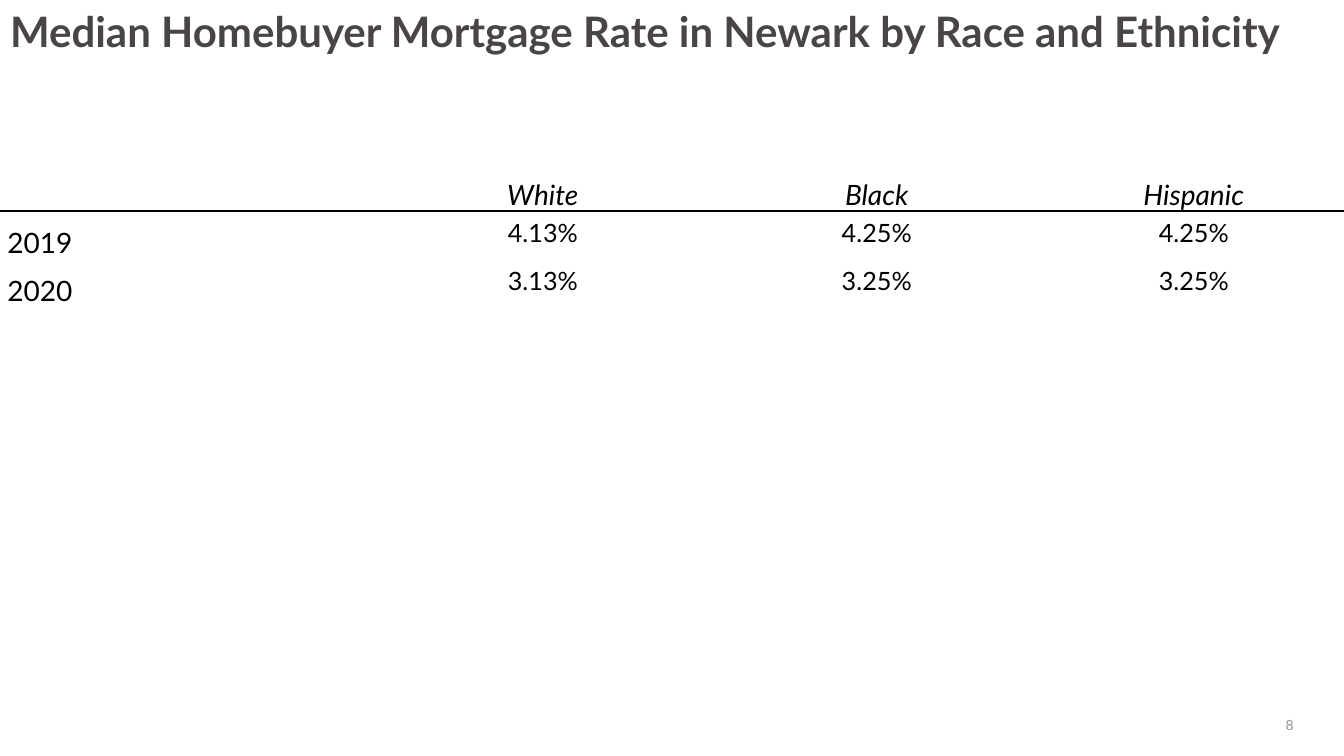
from dataclasses import dataclass

from lxml.etree import SubElement
from pptx import Presentation
from pptx.dml.color import RGBColor
from pptx.enum.text import MSO_ANCHOR, MSO_AUTO_SIZE, PP_ALIGN
from pptx.oxml.ns import qn
from pptx.util import Pt

EMU_PER_PX = 9525


def px(length):
    return length * EMU_PER_PX


@dataclass(frozen=True)
class Theme:
    font: str = "Lato"
    title_color: str = "494546"
    text_color: str = "000000"
    number_color: str = "959494"
    background: str = "FFFFFF"
    title_size: int = 30
    label_size: int = 20
    value_size: int = 18
    number_size: int = 10
    line_spacing: int = 18
    header_space: int = 12
    rule_width: int = 1


class SlideBuilder:
    def __init__(self, slide, theme):
        self.slide = slide
        self.theme = theme

    def add_run(self, paragraph, text, size, color, bold=False, italic=False):
        run = paragraph.add_run()
        run.text = text
        run.font.name = self.theme.font
        run.font.size = Pt(size)
        run.font.bold = bold
        run.font.italic = italic
        run.font.color.rgb = RGBColor.from_string(color)

    def title(self, text, left, top, width, height):
        shape = self.slide.shapes.title
        shape.left, shape.top = px(left), px(top)
        shape.width, shape.height = px(width), px(height)
        frame = shape.text_frame
        frame.word_wrap = True
        frame.auto_size = MSO_AUTO_SIZE.NONE
        frame.vertical_anchor = MSO_ANCHOR.TOP
        paragraph = frame.paragraphs[0]
        paragraph.alignment = PP_ALIGN.LEFT
        self.add_run(paragraph, text, self.theme.title_size, self.theme.title_color, bold=True)

    def page_number(self, text, left, top, width, height):
        shape = self.slide.shapes.add_textbox(px(left), px(top), px(width), px(height))
        frame = shape.text_frame
        frame.word_wrap = True
        frame.vertical_anchor = MSO_ANCHOR.MIDDLE
        frame.margin_left = frame.margin_right = frame.margin_top = frame.margin_bottom = 0
        paragraph = frame.paragraphs[0]
        paragraph.alignment = PP_ALIGN.RIGHT
        self.add_run(paragraph, text, self.theme.number_size, self.theme.number_color)

    def rate_table(self, rows, left, top, column_widths, row_height):
        frame = self.slide.shapes.add_table(
            len(rows), len(column_widths), px(left), px(top),
            px(sum(column_widths)), px(row_height * len(rows)))
        table = frame.table
        table.first_row = table.horz_banding = False
        for column, width in zip(table.columns, column_widths):
            column.width = px(width)
        for row_index, values in enumerate(rows):
            table.rows[row_index].height = px(row_height)
            for column_index, text in enumerate(values):
                cell = table.cell(row_index, column_index)
                self.rate_cell(cell, text, row_index == 0, column_index == 0)
                if row_index == 0:
                    self.cell_rule(cell, "a:lnB")
                elif row_index == 1:
                    self.cell_rule(cell, "a:lnT")

    def rate_cell(self, cell, text, is_header, is_label):
        theme = self.theme
        is_value = not (is_header or is_label)
        cell.fill.solid()
        cell.fill.fore_color.rgb = RGBColor.from_string(theme.background)
        cell.margin_left = cell.margin_right = px(7)
        cell.margin_top = cell.margin_bottom = 0
        cell.vertical_anchor = MSO_ANCHOR.MIDDLE if is_value else MSO_ANCHOR.BOTTOM
        if not text:
            return
        paragraph = cell.text_frame.paragraphs[0]
        paragraph.alignment = PP_ALIGN.LEFT if is_label else PP_ALIGN.CENTER
        paragraph.line_spacing = Pt(theme.line_spacing)
        if is_header:
            paragraph.space_before = Pt(theme.header_space)
        size = theme.value_size if is_value else theme.label_size
        self.add_run(paragraph, text, size, theme.text_color, italic=is_header)

    def cell_rule(self, cell, tag):
        """Draw one edge of a cell; its element must precede the fill."""
        properties = cell._tc.get_or_add_tcPr()
        line = SubElement(properties, qn(tag), w=str(Pt(self.theme.rule_width)))
        fill = SubElement(line, qn("a:solidFill"))
        SubElement(fill, qn("a:srgbClr"), val=self.theme.text_color)
        properties.insert(0, line)


def main():
    presentation = Presentation()
    presentation.slide_width, presentation.slide_height = px(1280), px(720)
    slide = presentation.slides.add_slide(presentation.slide_layouts[5])
    builder = SlideBuilder(slide, Theme())
    builder.page_number("8", 944, 679, 288, 22)
    builder.rate_table(
        [["", "White", "Black", "Hispanic"],
         ["2019", "4.13%", "4.25%", "4.25%"],
         ["2020", "3.13%", "3.25%", "3.25%"]],
        0, 155, [358, 318, 318, 286], 46)
    builder.title("Median Homebuyer Mortgage Rate in Newark by Race and Ethnicity",
                  0, 0, 1280, 69)
    presentation.save("out.pptx")


if __name__ == "__main__":
    main()
